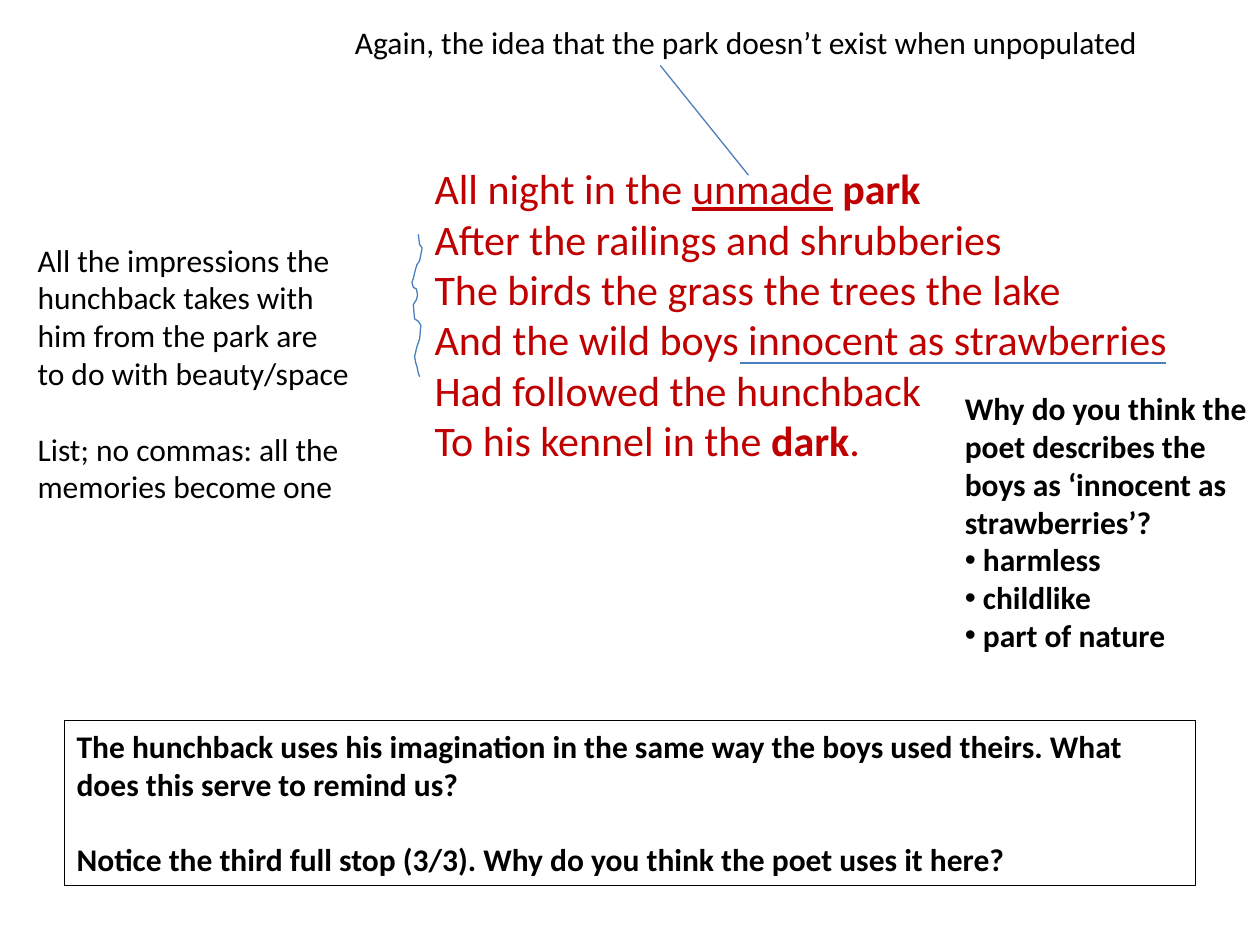
from lxml.etree import SubElement
from pptx import Presentation
from pptx.dml.color import RGBColor
from pptx.enum.shapes import MSO_CONNECTOR, MSO_SHAPE
from pptx.enum.text import MSO_ANCHOR, MSO_AUTO_SIZE, PP_ALIGN
from pptx.oxml.ns import qn
from pptx.util import Pt

THEME = {
    "font": "Calibri",
    "poem_size": 24,
    "note_size": 18,
    "ink": RGBColor(0, 0, 0),
    "poem": RGBColor(0xC0, 0, 0),
    "mark": RGBColor(0x4B, 0x7E, 0xBC),
    "line_width": 0.75,
    "gap": 21.6,  # one empty line between the paragraphs of a note
}

# A paragraph is a list of runs: (text, font format)
PLAIN, BOLD, UNDERLINED = {}, {"bold": True}, {"underline": True}
POEM = [
    [("All night in the ", PLAIN), ("unmade", UNDERLINED), (" ", PLAIN), ("park", BOLD)],
    [("After the railings and shrubberies", PLAIN)],
    [("The birds the grass the trees the lake", PLAIN)],
    [("And the wild boys innocent as strawberries", PLAIN)],
    [("Had followed the hunchback", PLAIN)],
    [("To his kennel in the ", PLAIN), ("dark", BOLD), (".", PLAIN)],
]
PARK_NOTE = [[("Again, the idea that the park doesn’t exist when unpopulated", PLAIN)]]
IMPRESSIONS_NOTE = [
    [("All the impressions the hunchback takes with him from the park are "
      "to do with beauty/space", PLAIN)],
    [("List; no commas: all the memories become one", PLAIN)],
]
BOYS_QUESTION = [[("Why do you think the poet describes the boys as "
                   "‘innocent as strawberries’?", BOLD)]]
BOYS_IDEAS = [[(f" {idea}", BOLD)] for idea in ("harmless", "childlike", "part of nature")]
CLOSING_QUESTIONS = [
    [("The hunchback uses his imagination in the same way the boys used theirs. "
      "What does this serve to remind us?", BOLD)],
    [("Notice the third full stop (3/3). Why do you think the poet uses it here?", BOLD)],
]

# Left, top, width, height in points
POEM_AREA = (241.2, 88.6, 442, 181.4)
PARK_AREA = (195.8, 9.4, 476, 28.8)
IMPRESSIONS_AREA = (14.4, 133.9, 193, 159.8)
BOYS_AREA = (544.3, 218.9, 175.7, 159.8)
CLOSING_AREA = (36.7, 411.8, 646.6, 94.3)

POINTERS = [
    ((422.6, 207.4), (666, 207.4)),  # under "innocent as strawberries"
    ((427.7, 100.1), (377.3, 37.4)),  # from "unmade" to its note
]
LIST_SQUIGGLE = [
    (239, 133.9), (239.8, 139.7), (241.2, 141.8), (239.8, 149), (238.3, 151.2),
    (237.6, 153.4), (236.2, 159.1), (235.4, 161.3), (236.2, 164.2), (238, 165.2),
    (238.6, 168.5), (238.1, 171), (236.2, 174.2), (236.9, 182.2), (239, 183.6),
    (240.5, 185.8), (239.8, 193.7), (238.3, 198), (236.9, 203.8), (237.6, 207.4),
    (238.3, 209.5), (239, 213.1), (239.8, 215.3),
]


def points(values):
    return [Pt(value) for value in values]


def draw_line(line, color):
    line.color.rgb = color
    line.width = Pt(THEME["line_width"])


def add_bullet(paragraph):
    properties = paragraph._p.get_or_add_pPr()
    SubElement(properties, qn("a:buFont")).set("typeface", "Arial")
    SubElement(properties, qn("a:buChar")).set("char", "•")


def write(shape, paragraphs, size, color, gap=0, bullets_from=None):
    """Fill the shape with paragraphs, with bullets from the given index on."""
    frame = shape.text_frame
    frame_format = {
        "word_wrap": True,
        "auto_size": MSO_AUTO_SIZE.SHAPE_TO_FIT_TEXT,
        "vertical_anchor": MSO_ANCHOR.TOP,
    }
    for name, value in frame_format.items():
        setattr(frame, name, value)
    for index, runs in enumerate(paragraphs):
        paragraph = frame.add_paragraph() if index else frame.paragraphs[0]
        paragraph.alignment = PP_ALIGN.LEFT
        if index and gap:
            paragraph.space_before = Pt(gap)
        if bullets_from is not None and index >= bullets_from:
            add_bullet(paragraph)
        for text, emphasis in runs:
            run = paragraph.add_run()
            run.text = text
            run.font.color.rgb = color
            font_format = {"name": THEME["font"], "size": Pt(size), **emphasis}
            for name, value in font_format.items():
                setattr(run.font, name, value)


def add_note(slide, area, paragraphs, **options):
    note = slide.shapes.add_textbox(*points(area))
    write(note, paragraphs, THEME["note_size"], THEME["ink"], **options)


def add_poem(slide):
    poem = slide.shapes.add_textbox(*points(POEM_AREA))
    write(poem, POEM, THEME["poem_size"], THEME["poem"])
    poem.text_frame.vertical_anchor = MSO_ANCHOR.MIDDLE


def add_closing_box(slide):
    box = slide.shapes.add_shape(MSO_SHAPE.RECTANGLE, *points(CLOSING_AREA))
    box.shadow.inherit = False
    box.fill.background()
    draw_line(box.line, THEME["ink"])
    write(box, CLOSING_QUESTIONS, THEME["note_size"], THEME["ink"], gap=THEME["gap"])


def add_squiggle(slide):
    start, *rest = [points(point) for point in LIST_SQUIGGLE]
    builder = slide.shapes.build_freeform(*start)
    builder.add_line_segments(rest, close=False)
    squiggle = builder.convert_to_shape()
    squiggle.shadow.inherit = False
    squiggle.fill.background()
    draw_line(squiggle.line, THEME["mark"])


def add_pointer(slide, start, end):
    pointer = slide.shapes.add_connector(
        MSO_CONNECTOR.STRAIGHT, *points(start), *points(end))
    draw_line(pointer.line, THEME["mark"])
    SubElement(pointer._element.spPr, qn("a:effectLst"))


def main():
    presentation = Presentation()
    presentation.slide_width, presentation.slide_height = Pt(720), Pt(540)
    slide = presentation.slides.add_slide(presentation.slide_layouts.get_by_name("Blank"))
    add_poem(slide)
    add_closing_box(slide)
    add_squiggle(slide)
    add_note(slide, IMPRESSIONS_AREA, IMPRESSIONS_NOTE, gap=THEME["gap"])
    add_note(slide, BOYS_AREA, BOYS_QUESTION + BOYS_IDEAS, bullets_from=len(BOYS_QUESTION))
    add_note(slide, PARK_AREA, PARK_NOTE)
    for start, end in POINTERS:
        add_pointer(slide, start, end)
    presentation.save("out.pptx")


if __name__ == "__main__":
    main()
